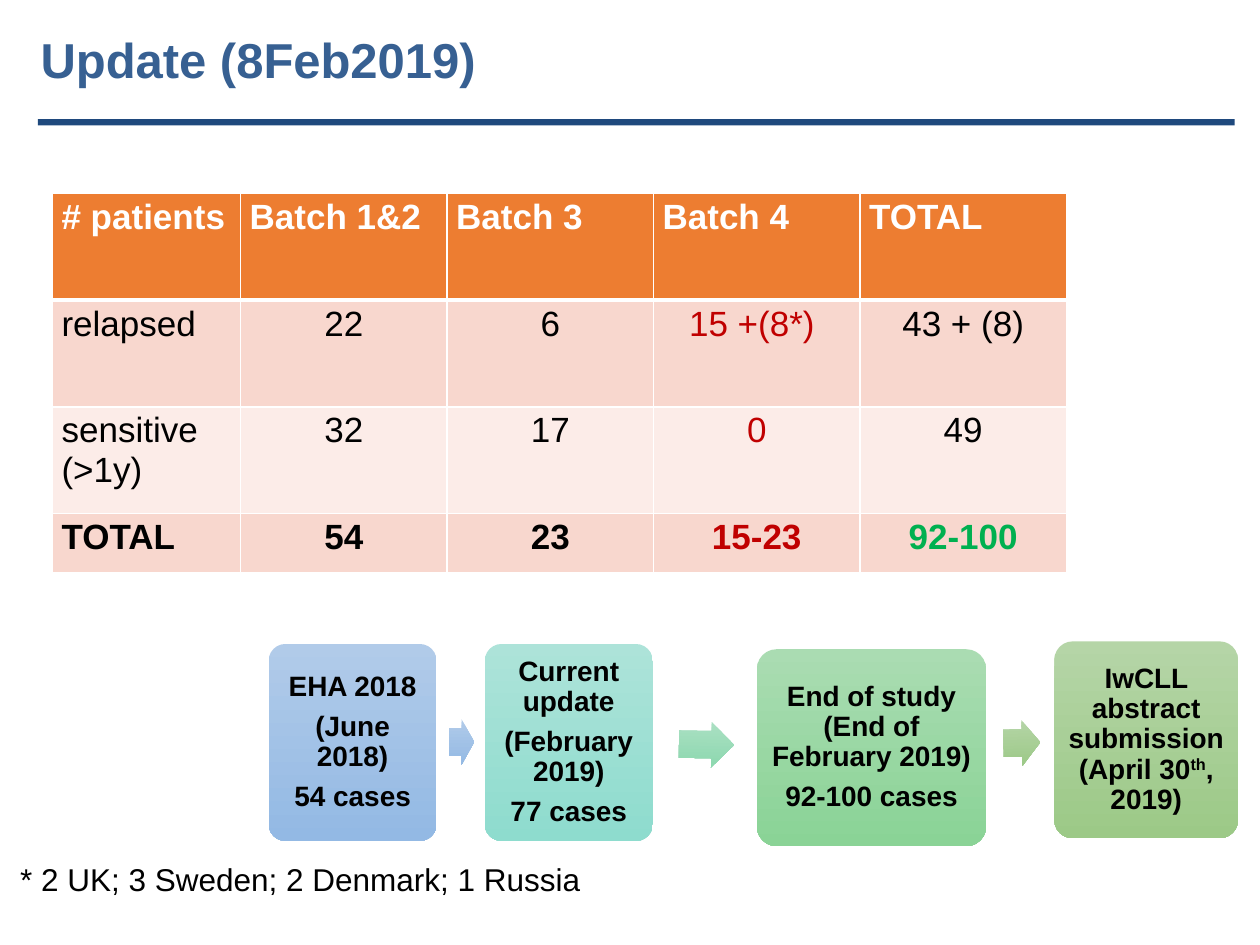
"""Build the patient batch update slide with its table and study timeline."""
from lxml.etree import SubElement
from pptx import Presentation
from pptx.dml.color import RGBColor
from pptx.enum.shapes import MSO_SHAPE as SHAPE
from pptx.enum.text import MSO_ANCHOR as ANCHOR, PP_ALIGN as ALIGN
from pptx.oxml.ns import qn
from pptx.util import Pt

WHITE = RGBColor(0xFF, 0xFF, 0xFF)
BLACK = RGBColor(0x00, 0x00, 0x00)
TITLE_BLUE = RGBColor(0x37, 0x60, 0x92)
RULE_BLUE = RGBColor(0x1F, 0x49, 0x7D)
ORANGE = RGBColor(0xED, 0x7D, 0x31)
PEACH = RGBColor(0xF8, 0xD7, 0xCE)
PALE_PEACH = RGBColor(0xFC, 0xEC, 0xE8)
RED = RGBColor(0xC0, 0x00, 0x00)
GREEN = RGBColor(0x00, 0xB0, 0x50)
BLUE_FADE = RGBColor(0xB1, 0xCB, 0xE9), RGBColor(0x93, 0xB9, 0xE4)
TEAL_FADE = RGBColor(0xAD, 0xE3, 0xD9), RGBColor(0x8E, 0xDC, 0xCE)
MINT_FADE = RGBColor(0xAB, 0xE0, 0xC3), RGBColor(0x8C, 0xD8, 0xAF)
GREEN_FADE = RGBColor(0xAA, 0xDC, 0xB2), RGBColor(0x8A, 0xD3, 0x96)
OLIVE_FADE = RGBColor(0xB5, 0xD5, 0xA7), RGBColor(0x9C, 0xC9, 0x87)


def add_run(paragraph, text, size, color, bold=False):
    run = paragraph.add_run()
    run.text = text
    for name, value in {"name": "Arial", "size": Pt(size), "bold": bold}.items():
        setattr(run.font, name, value)
    run.font.color.rgb = color
    return run


def add_faded(kind, box, fade, adjustments):
    part = slide.shapes.add_shape(kind, *map(Pt, box))
    part.shadow.inherit = False
    part.line.fill.background()
    part.fill.gradient()
    part.fill.gradient_angle = 270
    for stop, color in zip(part.fill.gradient_stops, fade):
        stop.color.rgb = color
    for index, value in enumerate(adjustments):
        part.adjustments[index] = value
    return part


deck = Presentation()
deck.slide_width, deck.slide_height = Pt(720), Pt(540)
slide = deck.slides.add_slide(deck.slide_layouts[5])

title = slide.shapes.title
title_place = {"left": Pt(16), "top": Pt(9.5), "width": Pt(698), "height": Pt(48)}
for name, value in title_place.items():
    setattr(title, name, value)
title.text_frame.vertical_anchor = ANCHOR.MIDDLE
title.text_frame.paragraphs[0].alignment = ALIGN.LEFT
add_run(title.text_frame.paragraphs[0], "Update (8Feb2019)", 28, TITLE_BLUE, True)

rule = slide.shapes.add_shape(SHAPE.RECTANGLE, Pt(21.6), Pt(68), Pt(684), Pt(3.6))
rule.shadow.inherit = False
rule.fill.solid()
rule.fill.fore_color.rgb = RULE_BLUE
rule.line.fill.background()

counts = [
    ["# patients", "Batch 1&2", "Batch 3", "Batch 4", "TOTAL"],
    ["relapsed", "22", "6", "15 +(8*) ", "43 + (8)"],
    ["sensitive (>1y)", "32", "17", "0", "49"],
    ["TOTAL", "54", "23", "15-23", "92-100"],
]
row_fills = [ORANGE, PEACH, PALE_PEACH, PEACH]
patients = slide.shapes.add_table(4, 5, Pt(30), Pt(110.5), Pt(579.5), Pt(217)).table
for column, width in zip(patients.columns, [107.5] + [118] * 4):
    column.width = Pt(width)
for row, height in zip(patients.rows, [61, 61, 61, 34]):
    row.height = Pt(height)
cell_format = {"margin_left": Pt(5.2), "margin_right": Pt(5.2),
               "margin_top": Pt(2.6), "margin_bottom": Pt(2.6)}
for r, values in enumerate(counts):
    for c, value in enumerate(values):
        cell = patients.cell(r, c)
        for name, setting in cell_format.items():
            setattr(cell, name, setting)
        cell.fill.solid()
        cell.fill.fore_color.rgb = row_fills[r]
        if r == 0:
            color = WHITE
        elif c == 3:
            color = RED
        else:
            color = GREEN if (r, c) == (3, 4) else BLACK
        paragraph = cell.text_frame.paragraphs[0]
        paragraph.alignment = ALIGN.CENTER if r and c else ALIGN.LEFT
        add_run(paragraph, value, 20, color, r in (0, 3))
        properties = cell._tc.get_or_add_tcPr()
        for place, side in enumerate(["lnL", "lnR", "lnT", "lnB"]):
            thick = (r, side) in [(0, "lnB"), (1, "lnT")]
            border = SubElement(properties, qn(f"a:{side}"), w=str(Pt(3 if thick else 1)))
            SubElement(SubElement(border, qn("a:solidFill")), qn("a:srgbClr"), val=str(WHITE))
            properties.insert(place, border)

footnote = slide.shapes.add_textbox(Pt(4.5), Pt(488), Pt(653), Pt(29)).text_frame
footnote.word_wrap = True
add_run(footnote.paragraphs[0], "* 2 UK; 3 Sweden; 2 Denmark; 1 Russia", 18, BLACK)

milestones = [
    ((153.5, 368, 96, 112.5), BLUE_FADE, [["EHA 2018"], ["(June 2018)"], ["54 cases"]]),
    ((277, 368, 96, 112.5), TEAL_FADE,
     [["Current update"], ["(February 2019)"], ["77 cases"]]),
    ((432.5, 371, 131, 112.5), GREEN_FADE,
     [["End of study (End of February 2019)"], ["92-100 cases"]]),
    ((602.5, 366.5, 105, 112.5), OLIVE_FADE,
     [["IwCLL abstract submission (April 30", "th", ", 2019)"]]),
]
for box, fade, lines in milestones:
    frame = add_faded(SHAPE.ROUNDED_RECTANGLE, box, fade, [0.1]).text_frame
    frame_format = {"word_wrap": True, "vertical_anchor": ANCHOR.MIDDLE,
                    "margin_left": Pt(4.8), "margin_right": Pt(4.8),
                    "margin_top": Pt(4.8), "margin_bottom": Pt(4.8)}
    for name, value in frame_format.items():
        setattr(frame, name, value)
    for index, pieces in enumerate(lines):
        paragraph = frame.add_paragraph() if index else frame.paragraphs[0]
        spacing = {"alignment": ALIGN.CENTER, "line_spacing": 0.9, "space_after": Pt(5.6)}
        for name, value in spacing.items():
            setattr(paragraph, name, value)
        for piece in pieces:
            run = add_run(paragraph, piece, 16, BLACK, True)
            if piece == "th":
                run._r.get_or_add_rPr().set("baseline", "30000")

arrows = [
    ((256.5, 411, 14.5, 26), BLUE_FADE, 0),
    ((388, 412.5, 31.5, 26), MINT_FADE, 0.9),
    ((573.5, 411.5, 21, 26), OLIVE_FADE, 358.4),
]
for box, fade, rotation in arrows:
    add_faded(SHAPE.RIGHT_ARROW, box, fade, [0.6, 0.5]).rotation = rotation

deck.save("out.pptx")
